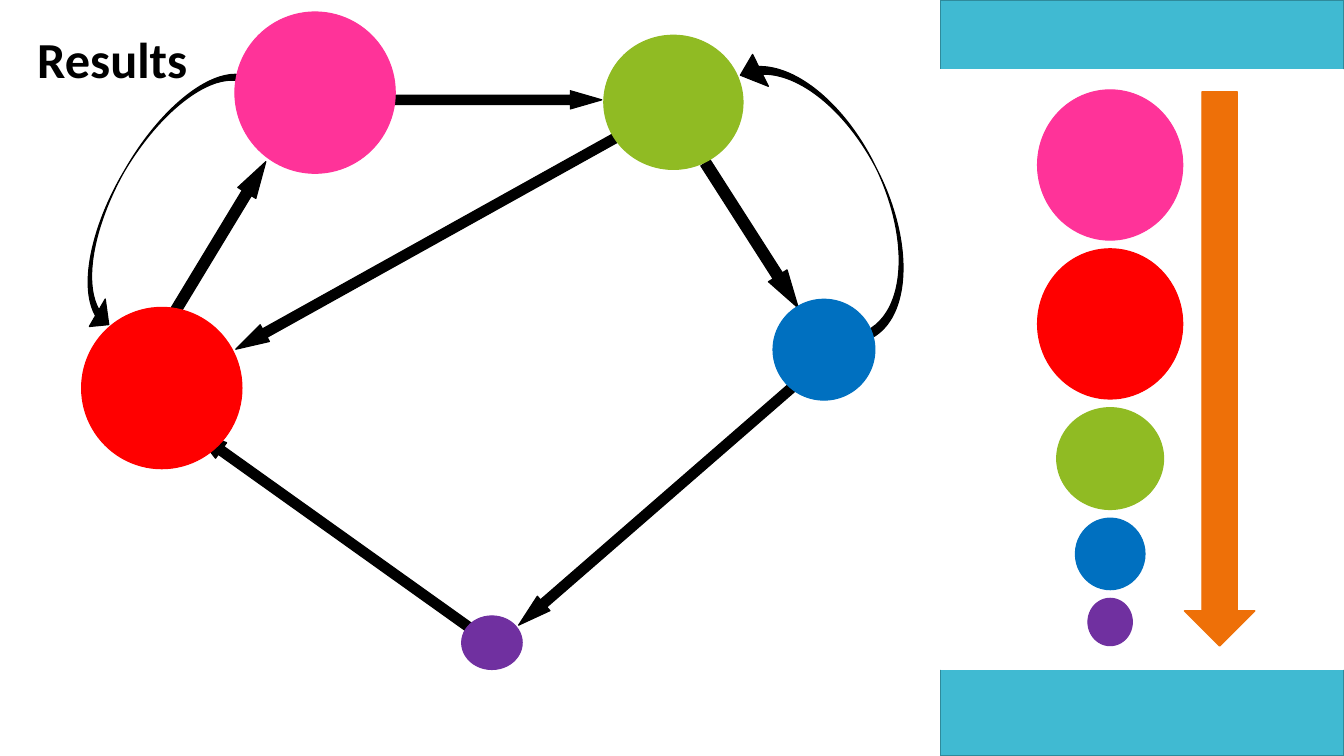
import pptx
import pptx.util
import pptx.dml.color
import pptx.enum.shapes
import pptx.enum.text

Pt = pptx.util.Pt
SHAPE = pptx.enum.shapes.MSO_SHAPE
BLACK, WHITE = "000000", "FFFFFF"
PINK, RED, GREEN, BLUE, PURPLE = "FF3399", "FF0000", "90BB23", "0070C0", "7030A0"
TEAL, DARK_TEAL, ORANGE = "40BAD2", "2F8A9B", "EE7008"

deck = pptx.Presentation()
deck.slide_width, deck.slide_height = Pt(960), Pt(540)
page = deck.slides.add_slide(deck.slide_layouts[6])


def color(value):
    return pptx.dml.color.RGBColor.from_string(value)


def add_shape(kind, place, fill, line=None, turn=0, adjust=()):
    shape = page.shapes.add_shape(kind, *[Pt(length) for length in place])
    shape.shadow.inherit = False
    shape.fill.solid()
    shape.fill.fore_color.rgb = color(fill)
    shape.line.color.rgb = color(line or fill)
    shape.line.width = Pt(0.85)
    shape.rotation = turn
    for index, value in enumerate(adjust):
        shape.adjustments[index] = value


# Side panel: teal bands above and below a white field
add_shape(SHAPE.RECTANGLE, (672, 0, 287.5, 540), TEAL, DARK_TEAL)
add_shape(SHAPE.RECTANGLE, (672, 49.5, 287.5, 428.5), WHITE)

# Curved arrows: blue to green, pink to red
curved_arrows = [
    ((569.5, 18, 57.6, 222.5), 153.7, 0.442),
    ((83.5, 30.2, 45.4, 214.6), 30.1, 0.5),
]
for place, turn, head_width in curved_arrows:
    add_shape(SHAPE.CURVED_RIGHT_ARROW, place, BLACK, turn=turn,
              adjust=(0.106, head_width, 0.25))

# Straight arrows: place and clockwise turn from pointing down
straight_arrows = [
    ((305.3, 5, 13.7, 329), 60.9),       # green to red
    ((323.3, -28.8, 13, 200.2), 270),    # pink to green
    ((147.6, 105.8, 15.1, 133.9), 211.2),  # red to pink
    ((529.2, 106.6, 15.8, 123.1), 327.4),  # green to blue
    ((240.5, 252, 13.7, 267.1), 125.5),  # purple to red
    ((464.4, 225.4, 13.7, 267.1), 49),   # blue to purple
]
for place, turn in straight_arrows:
    add_shape(SHAPE.DOWN_ARROW, place, BLACK, turn=turn, adjust=(0.5, 1.729))

# Network nodes
nodes = [
    ((167.8, 8.6, 114.5, 115.2), PINK),
    ((431.3, 25.2, 99.4, 95.8), GREEN),
    ((552.2, 213.8, 72.7, 72), BLUE),
    ((329.8, 440, 43.2, 38.2), PURPLE),
    ((58.3, 219.6, 114.5, 115.2), RED),
]
for place, fill in nodes:
    add_shape(SHAPE.OVAL, place, fill)

# Ranking column: circles on one axis with equal gaps
rank_center, rank_top, rank_gap = 793, 64.2, 6.2
ranking = [
    (PINK, 103.7, 107.3),
    (RED, 103.7, 107.3),
    (GREEN, 76.3, 72.7),
    (BLUE, 49.7, 51.1),
    (PURPLE, 31.7, 33.8),
]
for fill, width, height in ranking:
    add_shape(SHAPE.OVAL, (rank_center - width / 2, rank_top, width, height), fill)
    rank_top += height + rank_gap
add_shape(SHAPE.DOWN_ARROW, (846, 65.5, 50.4, 396), ORANGE)


# Title
def add_text(text, place, size, bold, fill, font):
    box = page.shapes.add_textbox(*[Pt(length) for length in place])
    box.text_frame.word_wrap = False
    box.text_frame.auto_size = pptx.enum.text.MSO_AUTO_SIZE.SHAPE_TO_FIT_TEXT
    para = box.text_frame.paragraphs[0]
    span = para.add_run()
    span.text = text
    span.font.name, span.font.size, span.font.bold = font, Pt(size), bold
    span.font.color.rgb = color(fill)


add_text("Results", (19.5, 16.5, 129, 51), size=36, bold=True, fill=BLACK,
         font="Calibri")

deck.save("out.pptx")
